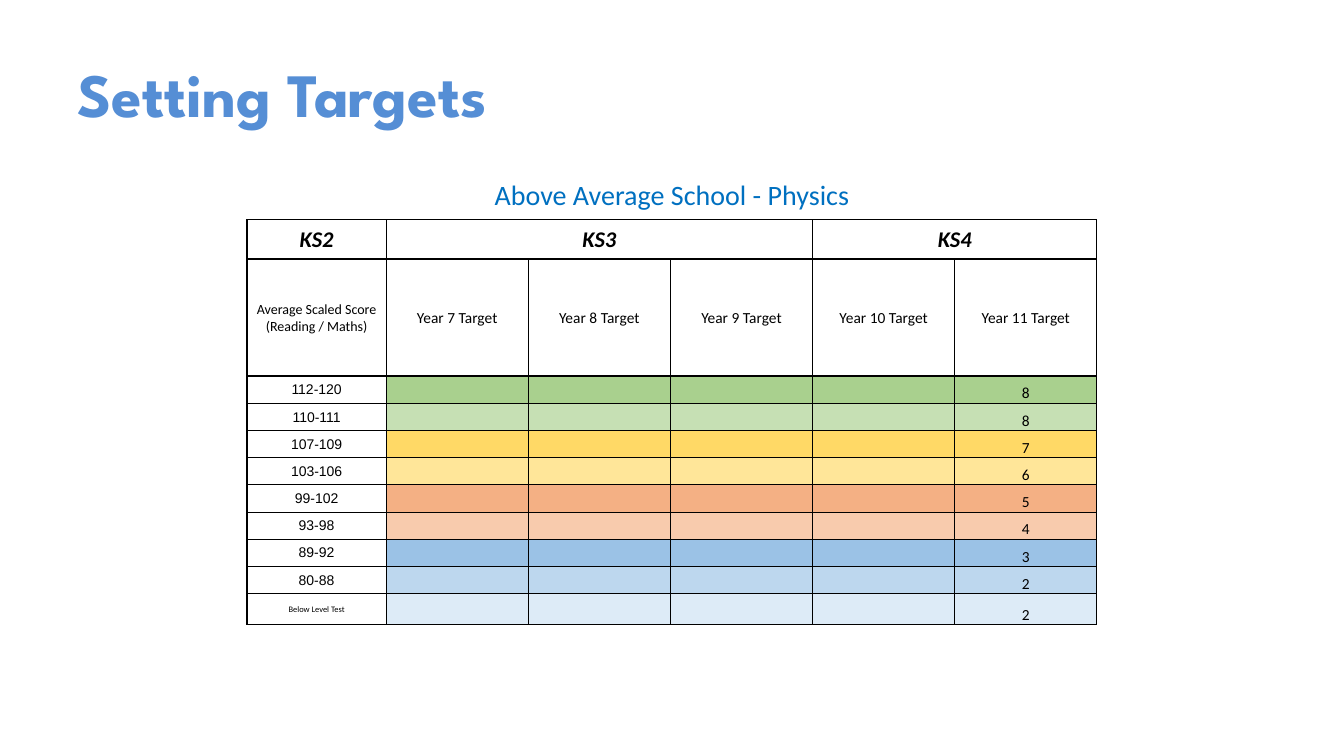
from lxml.etree import SubElement
from pptx import Presentation
from pptx.dml.color import RGBColor
from pptx.enum.text import MSO_ANCHOR, PP_ALIGN
from pptx.oxml.ns import qn
from pptx.util import Inches, Pt

BLACK = RGBColor(0x00, 0x00, 0x00)
TITLE_BLUE = RGBColor(0x55, 0x8E, 0xD5)
CAPTION_BLUE = RGBColor(0x00, 0x70, 0xC0)

# Scaled score, Year 11 target, band colour
BANDS = [
    ("112-120", "8", RGBColor(0xA9, 0xD0, 0x8E)),
    ("110-111", "8", RGBColor(0xC6, 0xE0, 0xB4)),
    ("107-109", "7", RGBColor(0xFF, 0xD9, 0x66)),
    ("103-106", "6", RGBColor(0xFF, 0xE6, 0x99)),
    ("99-102", "5", RGBColor(0xF4, 0xB0, 0x84)),
    ("93-98", "4", RGBColor(0xF8, 0xCB, 0xAD)),
    ("89-92", "3", RGBColor(0x9B, 0xC2, 0xE6)),
    ("80-88", "2", RGBColor(0xBD, 0xD7, 0xEE)),
    ("Below Level Test", "2", RGBColor(0xDD, 0xEB, 0xF7)),
]
COLUMN_WIDTHS = [1.38] + [1.41] * 5
ROW_HEIGHTS = [0.48, 0.39, 1.16] + [0.27] * 8 + [0.31]
STAGES = {0: ("KS2", 1), 1: ("KS3", 3), 4: ("KS4", 2)}
FIRST_BAND_ROW = 3
HEAVY_COLUMN_EDGES = {0, 1, 4, 6}
HEAVY_ROW_EDGES = {1, 2, 3, 12}

CAPTION = {"size": Pt(20), "name": "Calibri"}
STAGE = {"size": Pt(16), "name": "Calibri", "bold": True, "italic": True}
SCORE_HEADING = {"size": Pt(10), "name": "Calibri"}
TARGET = {"size": Pt(11), "name": "Calibri"}
SCORE = {"size": Pt(10), "name": "Arial"}
LOWEST_SCORE = {"size": Pt(6), "name": "Calibri"}
HEADLINE = {"size": Pt(44), "name": "League Spartan", "bold": True}


def write(paragraph, text, font_format, color=BLACK):
    run = paragraph.add_run()
    run.text = text
    for attribute, value in font_format.items():
        setattr(run.font, attribute, value)
    run.font.color.rgb = color


def write_cell(cell, text, font_format, color=BLACK, anchor=MSO_ANCHOR.MIDDLE):
    cell.vertical_anchor = anchor
    paragraph = cell.text_frame.paragraphs[0]
    paragraph.alignment = PP_ALIGN.CENTER
    write(paragraph, text, font_format, color)


def add_border(cell, side, points):
    """Draw one cell edge in black, or hide it when points is zero."""
    properties = cell._tc.get_or_add_tcPr()
    line = SubElement(properties, qn(f"a:ln{side}"), w=str(Pt(points)))
    if points:
        solid = SubElement(line, qn("a:solidFill"))
        SubElement(solid, qn("a:srgbClr"), val=str(BLACK))
    else:
        SubElement(line, qn("a:noFill"))


def frame_cell(cell, row, column):
    """Set margins and borders, heavier around each key stage and section."""
    for side in ("left", "top", "right"):
        setattr(cell, f"margin_{side}", Inches(0.01))
    cell.margin_bottom = 0
    width = cell.span_width if cell.is_merge_origin else 1
    edges = {
        "L": column in HEAVY_COLUMN_EDGES,
        "R": column + width in HEAVY_COLUMN_EDGES,
        "T": row in HEAVY_ROW_EDGES,
        "B": row + 1 in HEAVY_ROW_EDGES,
    }
    for side, heavy in edges.items():
        hidden = row == 0 and side != "B"
        add_border(cell, side, 0 if hidden else 1 if heavy else 0.5)


def fill_headings(table):
    table.cell(0, 0).merge(table.cell(0, 5))
    write_cell(table.cell(0, 0), "Above Average School - Physics",
               CAPTION, CAPTION_BLUE)
    for column, (stage, span) in STAGES.items():
        heading = table.cell(1, column)
        if span > 1:
            heading.merge(table.cell(1, column + span - 1))
        write_cell(heading, stage, STAGE)
    write_cell(table.cell(2, 0), "Average Scaled Score (Reading / Maths)",
               SCORE_HEADING)
    for column in range(1, 6):
        write_cell(table.cell(2, column), f"Year {column + 6} Target", TARGET)


def fill_bands(table):
    for row, (score, target, color) in enumerate(BANDS, FIRST_BAND_ROW):
        lowest = row == len(ROW_HEIGHTS) - 1
        write_cell(table.cell(row, 0), score, LOWEST_SCORE if lowest else SCORE)
        for column in range(1, 5):
            paragraph = table.cell(row, column).text_frame.paragraphs[0]
            SubElement(paragraph._p, qn("a:endParaRPr"), sz="1100")
        write_cell(table.cell(row, 5), target, TARGET, anchor=MSO_ANCHOR.BOTTOM)


def add_target_table(slide, left, top):
    table = slide.shapes.add_table(
        len(ROW_HEIGHTS), len(COLUMN_WIDTHS), Inches(left), Inches(top),
        Inches(sum(COLUMN_WIDTHS)), Inches(sum(ROW_HEIGHTS))).table
    table.first_row = table.horz_banding = False
    for column, width in zip(table.columns, COLUMN_WIDTHS):
        column.width = Inches(width)
    for row, height in zip(table.rows, ROW_HEIGHTS):
        row.height = Inches(height)
    fill_headings(table)
    fill_bands(table)
    for row in range(len(ROW_HEIGHTS)):
        for column in range(len(COLUMN_WIDTHS)):
            cell = table.cell(row, column)
            frame_cell(cell, row, column)
            if row >= FIRST_BAND_ROW and column > 0:
                cell.fill.solid()
                cell.fill.fore_color.rgb = BANDS[row - FIRST_BAND_ROW][2]
            else:
                cell.fill.background()


def add_headline(slide, left, top, width, height):
    box = slide.shapes.add_textbox(
        Inches(left), Inches(top), Inches(width), Inches(height))
    box.text_frame.word_wrap = True
    box.text_frame.vertical_anchor = MSO_ANCHOR.MIDDLE
    write(box.text_frame.paragraphs[0], "Setting Targets", HEADLINE, TITLE_BLUE)


def main():
    presentation = Presentation()
    presentation.slide_width = Inches(13.33)
    presentation.slide_height = Inches(7.5)
    slide = presentation.slides.add_slide(presentation.slide_layouts[6])
    add_target_table(slide, 2.45, 1.7)
    add_headline(slide, 0.67, 0.3, 12, 1.25)
    presentation.save("out.pptx")


if __name__ == "__main__":
    main()
